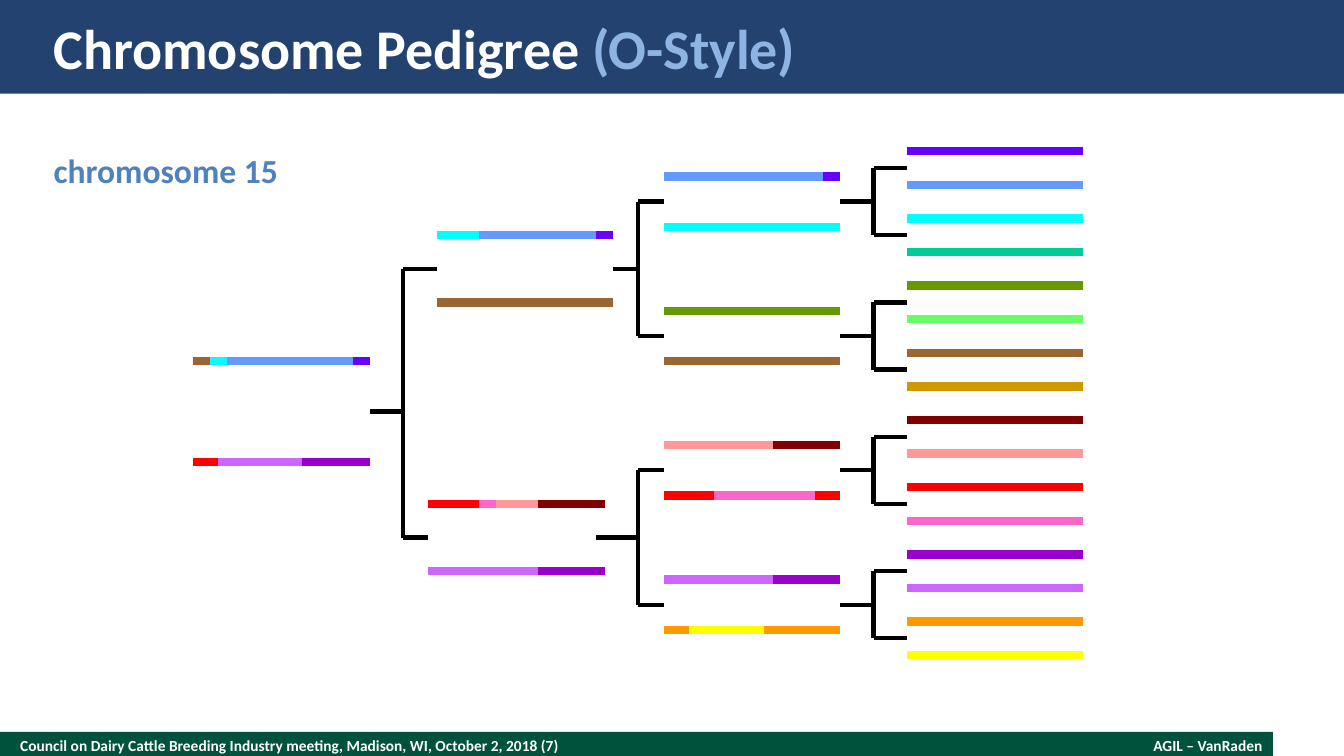
"""Build the chromosome pedigree slide."""
from pptx import Presentation
from pptx.dml.color import RGBColor
from pptx.enum.shapes import MSO_CONNECTOR, MSO_SHAPE
from pptx.enum.text import MSO_ANCHOR, MSO_AUTO_SIZE, PP_ALIGN
from pptx.oxml.ns import qn
from pptx.util import Cm, Pt
from lxml import etree

STRAIGHT = MSO_CONNECTOR.STRAIGHT
RECTANGLE = MSO_SHAPE.RECTANGLE
MIDDLE = MSO_ANCHOR.MIDDLE
NO_AUTOSIZE = MSO_AUTO_SIZE.NONE
LEFT, RIGHT = PP_ALIGN.LEFT, PP_ALIGN.RIGHT

FONT = "Calibri"
GRID = 2.54 / 12
BAR_LENGTH = 21

WHITE = RGBColor(0xFF, 0xFF, 0xFF)
BLACK = RGBColor(0x00, 0x00, 0x00)
NAVY = RGBColor(0x24, 0x42, 0x70)
FOREST = RGBColor(0x00, 0x52, 0x3C)
PALE_BLUE = RGBColor(0x8E, 0xB4, 0xE3)
MID_BLUE = RGBColor(0x4F, 0x81, 0xBD)
INDIGO = RGBColor(0x66, 0x00, 0xFF)
BLUE = RGBColor(0x66, 0x99, 0xFF)
CYAN = RGBColor(0x00, 0xFF, 0xFF)
TEAL = RGBColor(0x00, 0xCC, 0x99)
OLIVE = RGBColor(0x66, 0x99, 0x00)
LIME = RGBColor(0x66, 0xFF, 0x66)
BROWN = RGBColor(0x99, 0x66, 0x33)
OCHRE = RGBColor(0xCC, 0x99, 0x00)
MAROON = RGBColor(0x80, 0x00, 0x00)
SALMON = RGBColor(0xFF, 0x99, 0x99)
RED = RGBColor(0xFF, 0x00, 0x00)
PINK = RGBColor(0xFF, 0x66, 0xCC)
VIOLET = RGBColor(0x99, 0x00, 0xCC)
LILAC = RGBColor(0xCC, 0x66, 0xFF)
ORANGE = RGBColor(0xFF, 0x99, 0x00)
YELLOW = RGBColor(0xFF, 0xFF, 0x00)

FOUNDERS = [INDIGO, BLUE, CYAN, TEAL, OLIVE, LIME, BROWN, OCHRE,
            MAROON, SALMON, RED, PINK, VIOLET, LILAC, ORANGE, YELLOW]

MIXED_BARS = [
    (23, 43, [(BROWN, 2), (CYAN, 2), (BLUE, 15), (INDIGO, 2)]),
    (23, 55, [(RED, 3), (LILAC, 10), (VIOLET, 8)]),
    (52, 28, [(CYAN, 5), (BLUE, 14), (INDIGO, 2)]),
    (52, 36, [(BROWN, BAR_LENGTH)]),
    (51, 60, [(RED, 6), (PINK, 2), (SALMON, 5), (MAROON, 8)]),
    (51, 68, [(LILAC, 13), (VIOLET, 8)]),
    (79, 21, [(BLUE, 19), (INDIGO, 2)]),
    (79, 27, [(CYAN, BAR_LENGTH)]),
    (79, 37, [(OLIVE, BAR_LENGTH)]),
    (79, 43, [(BROWN, BAR_LENGTH)]),
    (79, 53, [(SALMON, 13), (MAROON, 8)]),
    (79, 59, [(RED, 6), (PINK, 12), (RED, 3)]),
    (79, 69, [(LILAC, 13), (VIOLET, 8)]),
    (79, 75, [(ORANGE, 3), (YELLOW, 9), (ORANGE, 9)]),
]


class PedigreeSlide:
    """Holds the style and the slide, and draws on a twelfth-inch grid."""

    def __init__(self, prs):
        self.s = prs.slides.add_slide(prs.slide_layouts[5])

    def band(self, top, width, height, color):
        sp = self.s.shapes.add_shape(RECTANGLE, 0, Cm(top), Cm(width), Cm(height))
        sp.shadow.inherit = False
        sp.fill.solid()
        sp.fill.fore_color.rgb = color
        sp.line.fill.background()

    def frame(self, sp):
        tf = sp.text_frame
        tf.word_wrap = True
        tf.auto_size = NO_AUTOSIZE
        tf.vertical_anchor = MIDDLE
        tf.margin_left = tf.margin_right = tf.margin_top = tf.margin_bottom = 0
        return tf

    def run(self, p, text, size, color):
        r = p.add_run()
        r.text = text
        r.font.name = FONT
        r.font.size = Pt(size)
        r.font.bold = True
        r.font.color.rgb = color

    def title(self, heading, style, subtitle):
        sp = self.s.shapes.title
        sp.left, sp.top, sp.width, sp.height = Cm(1.35), Cm(0.51), Cm(21.51), Cm(4.11)
        self.s.shapes._spTree.append(sp._element)
        tf = self.frame(sp)
        p = tf.paragraphs[0]
        p.alignment = LEFT
        self.run(p, heading, 40, WHITE)
        self.run(p, style, 40, PALE_BLUE)
        p = tf.add_paragraph()
        p.alignment = LEFT
        p.space_before = Pt(49)
        self.run(p, subtitle, 24, MID_BLUE)

    def footer(self, text, left, top, width, height, align):
        sp = self.s.shapes.add_textbox(Cm(left), Cm(top), Cm(width), Cm(height))
        p = self.frame(sp).paragraphs[0]
        p.alignment = align
        self.run(p, text, 11, WHITE)

    def line(self, x1, y1, x2, y2, color=BLACK, width=3):
        ends = [Cm(v * GRID) for v in (x1, y1, x2, y2)]
        line = self.s.shapes.add_connector(STRAIGHT, *ends)
        line.line.color.rgb = color
        line.line.width = Pt(width)
        etree.SubElement(line._element.spPr, qn("a:effectLst"))

    def bar(self, x, y, segments):
        for color, length in segments:
            self.line(x, y, x + length, y, color, 6)
            x += length

    def bracket(self, stem_x, stem_y, spine_x, tips):
        self.line(spine_x, stem_y, stem_x, stem_y)
        for tip_x, tip_y in tips:
            self.line(tip_x, tip_y, spine_x, tip_y)
        self.line(spine_x, tips[0][1], spine_x, tips[1][1])


def main():
    prs = Presentation()
    prs.slide_width, prs.slide_height = Cm(33.87), Cm(19.05)
    slide = PedigreeSlide(prs)

    slide.band(18.44, 32.08, 0.69, FOREST)
    slide.band(0, 33.87, 2.36, NAVY)
    slide.footer("Council on Dairy Cattle Breeding Industry meeting, Madison, WI, "
                 "October 2, 2018 (7)", 0.51, 18.44, 22.02, 0.69, LEFT)
    slide.footer("AGIL – VanRaden", 24.38, 18.54, 7.44, 0.48, RIGHT)
    slide.title("Chromosome Pedigree ", "(O-Style)", "chromosome 15")

    slide.bracket(44, 49, 48, [(52, 32), (51, 64)])
    for stem_x, y in [(73, 32), (71, 64)]:
        slide.bracket(stem_x, y, 76, [(79, y - 8), (79, y + 8)])
    for y in range(24, 73, 16):
        slide.bracket(100, y, 104, [(108, y - 4), (108, y + 4)])

    for i, color in enumerate(FOUNDERS):
        slide.bar(108, 18 + 4 * i, [(color, BAR_LENGTH)])
    for x, y, segments in MIXED_BARS:
        slide.bar(x, y, segments)

    prs.save("out.pptx")


if __name__ == "__main__":
    main()
